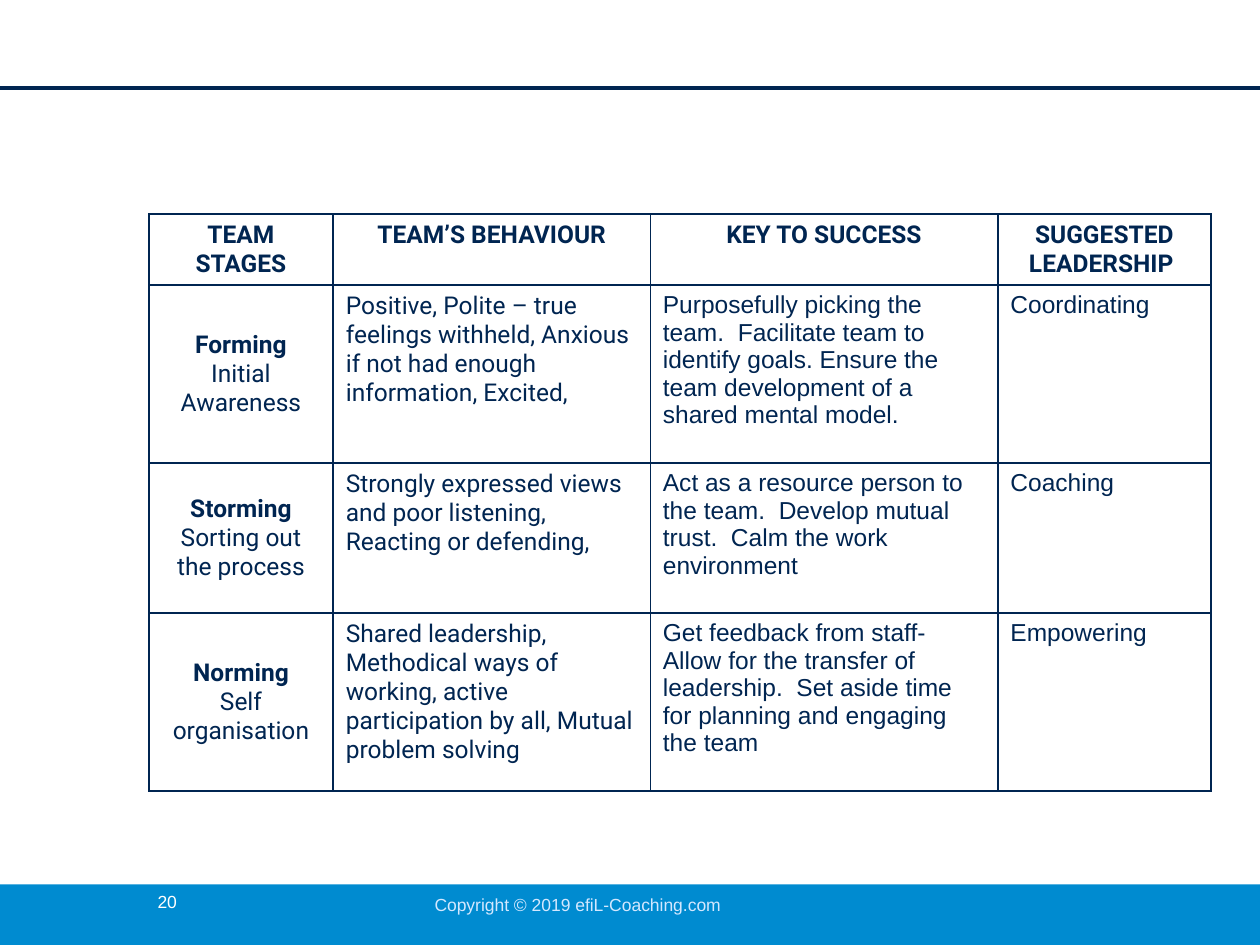
"""Build a slide with a table of team stages and the leadership each one needs."""
from typing import NamedTuple

from lxml.etree import SubElement
from pptx import Presentation
from pptx.dml.color import RGBColor
from pptx.enum.shapes import MSO_CONNECTOR as CONN, MSO_SHAPE as SHAPE
from pptx.enum.text import MSO_ANCHOR as ANCHOR, PP_ALIGN as ALIGN
from pptx.oxml import parse_xml
from pptx.oxml.ns import nsdecls, qn
from pptx.util import Pt

NAVY, BLUE, WHITE, PALE = "002551", "008BD0", "FFFFFF", "D4E8FF"
HEADINGS = ("TEAM STAGES", "TEAM’S BEHAVIOUR", "KEY TO SUCCESS", "SUGGESTED LEADERSHIP ")
COL_WIDTHS = (105.4, 181.2, 198.6, 121.8)
ROW_HEIGHTS = (40.6, 101.7, 85.7, 101.7)


class Stage(NamedTuple):
    name: str
    summary: str
    behaviour: str
    key: str
    leadership: str


class Label(NamedTuple):
    text: str
    box: tuple[float, float, float, float]
    color: str
    inset: tuple[float, float]
    wrap: bool


STAGES = (
    Stage("Forming", "Initial Awareness",
          "Positive, Polite – true feelings withheld, Anxious if not had enough "
          "information, Excited,",
          "Purposefully picking the team.  Facilitate team to identify goals. "
          "Ensure the team development of a shared mental model.",
          "Coordinating"),
    Stage("Storming", "Sorting out the process",
          "Strongly expressed views and poor listening, Reacting or defending,",
          "Act as a resource person to the team.  Develop mutual trust.  "
          "Calm the work environment",
          "Coaching"),
    Stage("Norming", "Self organisation",
          "Shared leadership, Methodical ways of working, active participation "
          "by all, Mutual problem solving",
          "Get feedback from staff- Allow for the transfer of leadership.  "
          "Set aside time for planning and engaging the team",
          "Empowering"),
)
LABELS = (
    Label("20", (86.4, 505.4, 36.7, 25.2), WHITE, (3.6, 3.6), True),
    Label("Copyright © 2019 efiL-Coaching.com", (241.2, 507.6, 179.3, 19.4),
          PALE, (7.2, 3.6), False),
)


def rgb(color: str) -> RGBColor:
    return RGBColor.from_string(color)


def style(p, size: float, font: str, color: str, bold: bool = False) -> None:
    for r in p.runs:
        r.font.size, r.font.name, r.font.bold = Pt(size), font, bold
        r.font.color.rgb = rgb(color)


def add_borders(cell) -> None:
    tcPr = cell._tc.get_or_add_tcPr()
    for i, side in enumerate(("lnL", "lnR", "lnT", "lnB")):
        tcPr.insert(i, parse_xml(
            f'<a:{side} {nsdecls("a")} w="{Pt(1)}"><a:solidFill>'
            f'<a:srgbClr val="{NAVY}"/></a:solidFill></a:{side}>'))


def fill_cell(cell, text: str, font: str, centred: bool = False,
              bold: bool = False) -> None:
    tf = cell.text_frame
    tf.text = text
    for i, p in enumerate(tf.paragraphs):
        p.alignment = ALIGN.CENTER if centred else ALIGN.LEFT
        style(p, 14, font, NAVY, bold and i == 0)
    cell.fill.background()
    add_borders(cell)


def add_stage_table(s) -> None:
    frame = s.shapes.add_table(len(STAGES) + 1, len(HEADINGS), Pt(85), Pt(122.4),
                               Pt(sum(COL_WIDTHS)), Pt(sum(ROW_HEIGHTS)))
    table = frame.table
    table.first_row = table.horz_banding = False
    for col, width in zip(table.columns, COL_WIDTHS):
        col.width = Pt(width)
    for row, height in zip(table.rows, ROW_HEIGHTS):
        row.height = Pt(height)
    for c, heading in enumerate(HEADINGS):
        fill_cell(table.cell(0, c), heading, "Roboto", True, True)
    for r, stage in enumerate(STAGES, 1):
        name = table.cell(r, 0)
        fill_cell(name, f"{stage.name}\n{stage.summary}", "Roboto", True, True)
        name.vertical_anchor = ANCHOR.MIDDLE
        fill_cell(table.cell(r, 1), stage.behaviour, "Roboto")
        fill_cell(table.cell(r, 2), stage.key, "Arial")
        fill_cell(table.cell(r, 3), stage.leadership, "Arial")


def add_label(s, label: Label) -> None:
    tf = s.shapes.add_textbox(*map(Pt, label.box)).text_frame
    tf.word_wrap = label.wrap
    tf.margin_left = tf.margin_right = Pt(label.inset[0])
    tf.margin_top = tf.margin_bottom = Pt(label.inset[1])
    tf.text = label.text
    style(tf.paragraphs[0], 10, "Arial", label.color)


def add_frame(s) -> None:
    footer = s.shapes.add_shape(SHAPE.RECTANGLE, 0, Pt(505.4), Pt(720), Pt(34.6))
    footer.shadow.inherit = False
    footer.fill.solid()
    footer.fill.fore_color.rgb = rgb(BLUE)
    footer.line.fill.background()
    rule = s.shapes.add_connector(CONN.STRAIGHT, 0, Pt(50.4), Pt(720), Pt(50.4))
    rule.line.color.rgb = rgb(NAVY)
    rule.line.width = Pt(2.5)
    SubElement(rule._element.spPr, qn("a:effectLst"))


def main() -> None:
    prs = Presentation()
    prs.slide_width, prs.slide_height = Pt(720), Pt(540)
    s = prs.slides.add_slide(prs.slide_layouts[6])
    add_frame(s)
    add_stage_table(s)
    for label in LABELS:
        add_label(s, label)
    prs.save("out.pptx")


if __name__ == "__main__":
    main()
